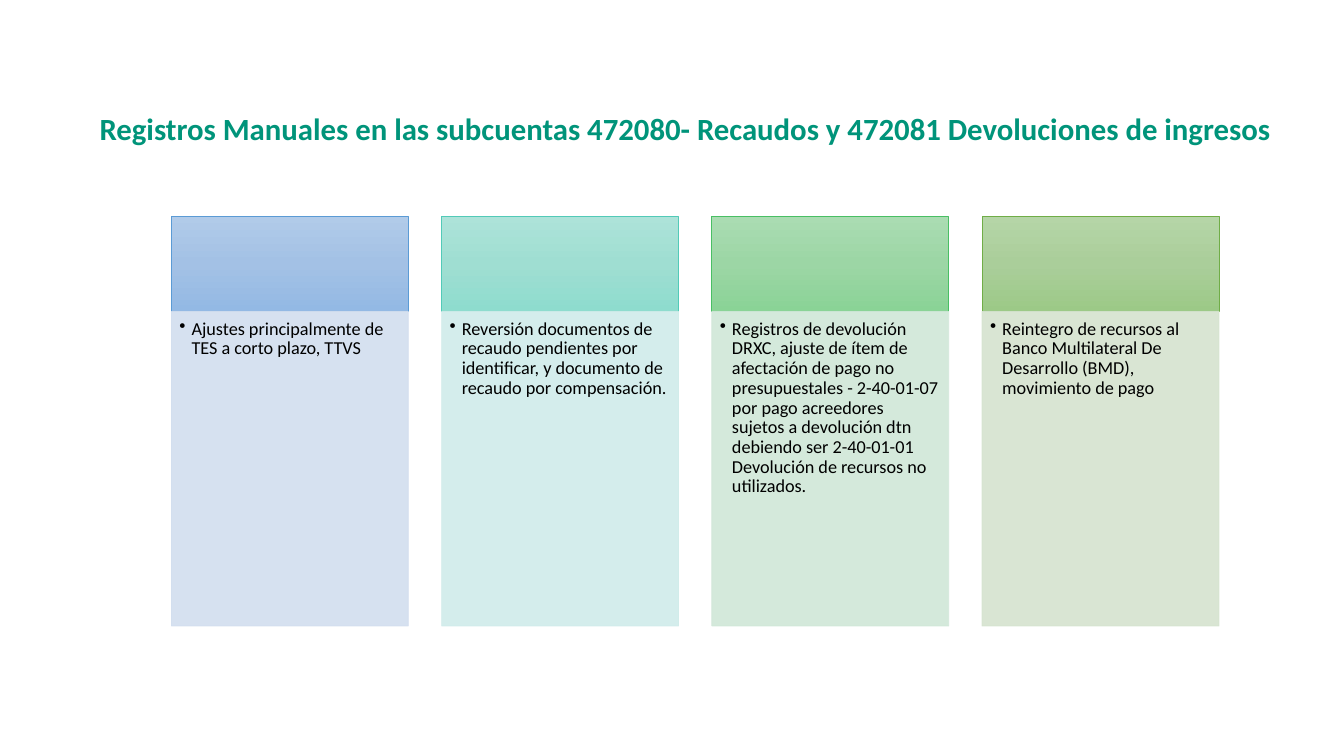
from copy import deepcopy

from lxml import etree
from pptx import Presentation
from pptx.dml.color import RGBColor
from pptx.enum import shapes, text
from pptx.oxml import ns
from pptx.util import Inches, Pt

FONT = "Calibri"
COLORS = {
    "title": "00947A",
    "body": "000000",
    "blue": {"stops": ("B1CBE9", "A3C1E5", "93B9E4"), "line": "5B9BD5", "panel": "D2DEEF"},
    "teal": {"stops": ("ADE3D9", "9FDED2", "8EDCCE"), "line": "52CAB8", "panel": "D0ECEA"},
    "green": {"stops": ("AADCB2", "9CD6A5", "8AD396"), "line": "49BF64", "panel": "D0E7D8"},
    "olive": {"stops": ("B5D5A7", "AACE9A", "9CC987"), "line": "70AD47", "panel": "D5E3CF"},
}
COLUMNS = [
    ("blue", "Ajustes principalmente de TES a corto plazo, TTVS"),
    ("teal", "Reversión documentos de recaudo pendientes por identificar, "
             "y documento de recaudo por compensación."),
    ("green", "Registros de devolución DRXC, ajuste de ítem de afectación de pago no "
              "presupuestales - 2-40-01-07 por pago acreedores sujetos a devolución dtn "
              "debiendo ser 2-40-01-01 Devolución de recursos no utilizados."),
    ("olive", "Reintegro de recursos al Banco Multilateral De Desarrollo (BMD), "
              "movimiento de pago"),
]


def write(sp, words, size, color, bold=False, align=text.PP_ALIGN.LEFT,
          insets=(0.1, 0.05, 0.1, 0.05), bullet=False):
    tf = sp.text_frame
    tf.word_wrap = True
    tf.vertical_anchor = text.MSO_ANCHOR.TOP
    tf.margin_left, tf.margin_top, tf.margin_right, tf.margin_bottom = map(Inches, insets)
    p = tf.paragraphs[0]
    p.alignment = align
    p.line_spacing = 0.9
    if bullet:
        p_pr = p._p.get_or_add_pPr()
        p_pr.set("marL", str(Inches(0.12)))
        p_pr.set("indent", str(-Inches(0.12)))
        etree.SubElement(p_pr, ns.qn("a:buChar")).set("char", "•")
    r = p.add_run()
    r.text = words
    r.font.name = FONT
    r.font.size = Pt(size)
    r.font.bold = bold
    r.font.color.rgb = RGBColor.from_string(color)


def add_box(s, left, top, width, height, line):
    sp = s.shapes.add_shape(shapes.MSO_SHAPE.RECTANGLE, Inches(left), Inches(top),
                            Inches(width), Inches(height))
    sp.shadow.inherit = False
    sp.line.color.rgb = RGBColor.from_string(line)
    sp.line.width = Pt(0.5)
    return sp


def fill_gradient(sp, stops):
    """Shade the shape from top to bottom through three evenly spaced colours."""
    sp.fill.gradient()
    sp.fill.gradient_angle = 270
    first = sp._element.spPr.find(".//" + ns.qn("a:gs"))
    first.addnext(deepcopy(first))
    for i, (stop, color) in enumerate(zip(sp.fill.gradient_stops, stops)):
        stop.position = i / 2
        stop.color.rgb = RGBColor.from_string(color)


def fill_translucent(sp, color, opacity):
    """Fill the shape and make both its fill and its outline translucent."""
    sp.fill.solid()
    sp.fill.fore_color.rgb = RGBColor.from_string(color)
    for clr in sp._element.spPr.iter(ns.qn("a:srgbClr")):
        etree.SubElement(clr, ns.qn("a:alpha")).set("val", str(opacity * 1000))


def add_title(s, left, top, width, height):
    sp = s.shapes.add_textbox(Inches(left), Inches(top), Inches(width), Inches(height))
    write(sp, "Registros Manuales en las subcuentas 472080- Recaudos y 472081 "
              "Devoluciones de ingresos",
          22, COLORS["title"], bold=True, align=text.PP_ALIGN.CENTER)


def add_column(s, left, top, width, height, theme, words):
    header = 0.94
    colors = COLORS[theme]
    fill_gradient(add_box(s, left, top, width, header, colors["line"]), colors["stops"])
    panel = add_box(s, left, top + header, width, height - header, colors["panel"])
    fill_translucent(panel, colors["panel"], 90)
    write(panel, words, 13, COLORS["body"], insets=(0.08, 0.08, 0.1, 0.11), bullet=True)


def add_columns(s, left, top, width, height, gap=0.33):
    column = (width - gap * (len(COLUMNS) - 1)) / len(COLUMNS)
    for i, (theme, words) in enumerate(COLUMNS):
        add_column(s, left + i * (column + gap), top, column, height, theme, words)


def main():
    prs = Presentation()
    prs.slide_width, prs.slide_height = Inches(13.33), Inches(7.5)
    s = prs.slides.add_slide(prs.slide_layouts[6])
    add_title(s, 0.87, 1.08, 11.85, 0.43)
    add_columns(s, 1.7, 2.15, 10.39, 4.06)
    prs.save("out.pptx")


if __name__ == "__main__":
    main()
